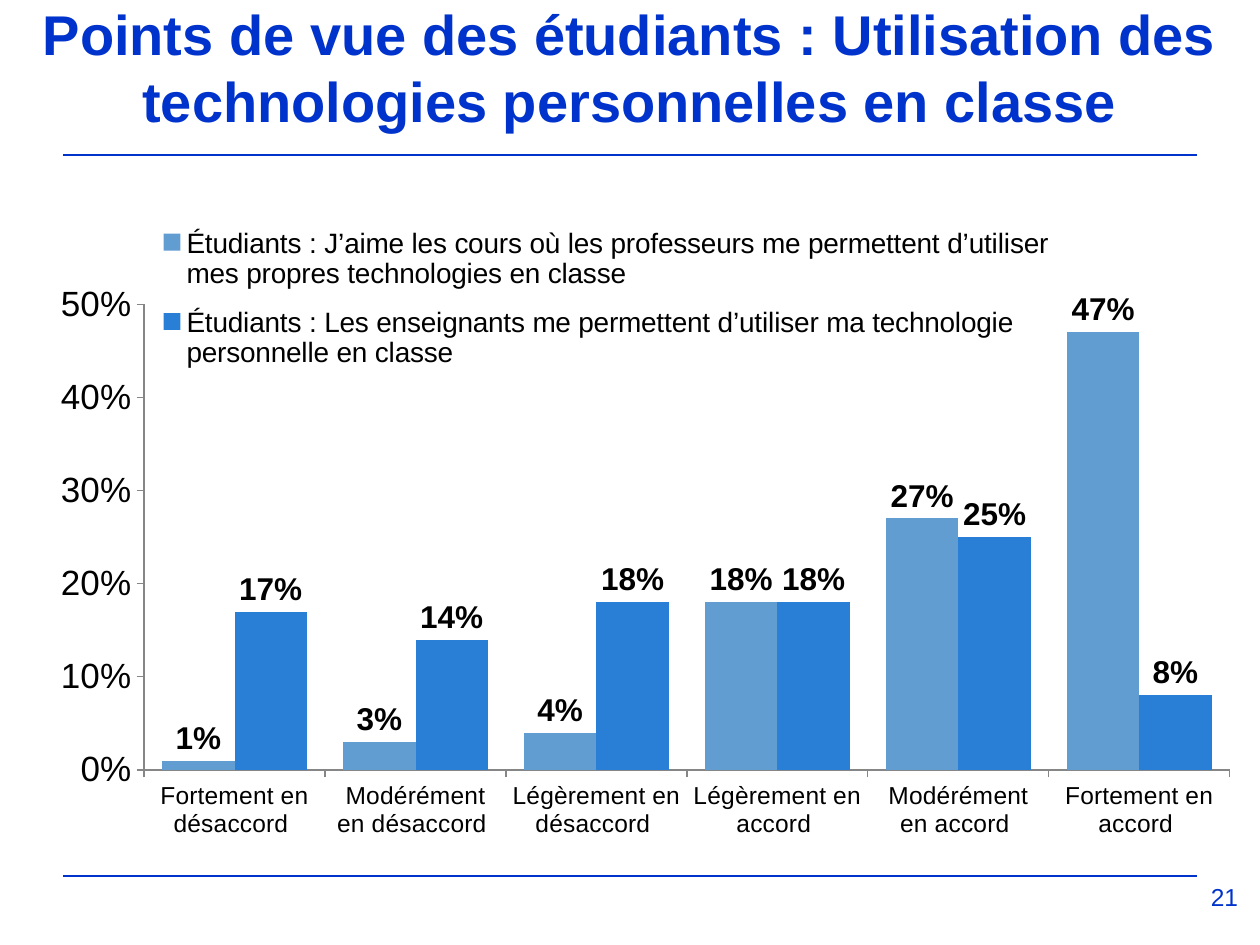
"""Builds the slide on students' views of personal technology in class."""
from dataclasses import dataclass

from lxml import etree
from pptx import Presentation
from pptx import util as u
from pptx.chart.data import CategoryChartData
from pptx.dml.color import RGBColor
from pptx.enum import chart as charts
from pptx.enum import shapes, text
from pptx.oxml.ns import qn

PX = u.Inches(1) / 126
BLUE = RGBColor(0x00, 0x33, 0xCC)
LIGHT_BAR = RGBColor(0x62, 0x9D, 0xD1)
DARK_BAR = RGBColor(0x29, 0x7F, 0xD5)
BLACK = RGBColor(0, 0, 0)
AXIS_GREY = RGBColor(0x86, 0x86, 0x86)
FONT = "Arial"


@dataclass
class Box:
    left: int
    top: int
    width: int
    height: int

    def emu(self) -> list:
        return [px(side) for side in (self.left, self.top, self.width, self.height)]


@dataclass
class Answers:
    question: str
    shares: tuple
    color: RGBColor


CHART_BOX = Box(30, 175, 1201, 684)
TITLE_BOX = Box(0, 45, 1260, 95)
NUMBER_BOX = Box(1189, 876, 71, 53)
RULE_LEFT, RULE_RIGHT = 63, 1197
RULE_TOPS = (155, 876)
CATEGORIES = (
    "Fortement en désaccord ", "Modérément en désaccord ", "Légèrement en désaccord ",
    "Légèrement en accord ", "Modérément en accord ", "Fortement en accord ",
)
ANSWERS = (
    Answers("Étudiants : J’aime les cours où les professeurs me permettent d’utiliser "
            "mes propres technologies en classe",
            (0.01, 0.03, 0.04, 0.18, 0.27, 0.47), LIGHT_BAR),
    Answers("Étudiants : Les enseignants me permettent d’utiliser ma technologie "
            "personnelle en classe",
            (0.17, 0.14, 0.18, 0.18, 0.25, 0.08), DARK_BAR),
)


def px(length: int) -> int:
    return round(length * PX)


def style_font(font, size: int, color: RGBColor, bold: bool = False) -> None:
    font.name, font.size, font.bold = FONT, u.Pt(size), bold
    font.color.rgb = color


def add_rule(slide, top: int) -> None:
    rule = slide.shapes.add_connector(
        shapes.MSO_CONNECTOR.STRAIGHT, px(RULE_LEFT), px(top), px(RULE_RIGHT), px(top))
    rule.line.color.rgb = BLUE
    rule.line.width = u.Pt(1.5)
    etree.SubElement(rule._element.spPr, qn("a:effectLst"))


def fill_frame(shape, box: Box, words: str, size: int, bold: bool = False) -> None:
    shape.left, shape.top, shape.width, shape.height = box.emu()
    frame = shape.text_frame
    frame.text = words
    frame.word_wrap = True
    frame.auto_size = text.MSO_AUTO_SIZE.NONE
    paragraph = frame.paragraphs[0]
    paragraph.alignment = text.PP_ALIGN.CENTER
    style_font(paragraph.font, size, BLUE, bold)


def set_layout(parent, index: int, target: str, *fractions: float) -> None:
    for old in parent.findall(qn("c:layout")):
        parent.remove(old)
    layout = etree.Element(qn("c:layout"))
    manual = etree.SubElement(layout, qn("c:manualLayout"))
    settings = [("layoutTarget", target)] if target else []
    settings += [("xMode", "edge"), ("yMode", "edge")]
    settings += zip("xywh", map(str, fractions))
    for name, value in settings:
        etree.SubElement(manual, qn(f"c:{name}")).set("val", value)
    parent.insert(index, layout)


def style_axis(axis, size: int) -> None:
    axis.has_major_gridlines = False
    axis.major_tick_mark = charts.XL_TICK_MARK.OUTSIDE
    axis.minor_tick_mark = charts.XL_TICK_MARK.NONE
    axis.format.line.color.rgb = AXIS_GREY
    axis.format.line.width = u.Pt(0.75)
    style_font(axis.tick_labels.font, size, BLACK)


def add_answer_chart(slide) -> None:
    data = CategoryChartData(number_format="0%")
    data.categories = CATEGORIES
    for answers in ANSWERS:
        data.add_series(answers.question, answers.shares)
    chart = slide.shapes.add_chart(
        charts.XL_CHART_TYPE.COLUMN_CLUSTERED, *CHART_BOX.emu(), data).chart
    chart.has_title = False
    style_font(chart.font, 10, BLACK)

    plot = chart.plots[0]
    plot.gap_width, plot.overlap, plot.vary_by_categories = 50, 0, False
    for series, answers in zip(plot.series, ANSWERS):
        series.format.fill.solid()
        series.format.fill.fore_color.rgb = answers.color
        labels = series.data_labels
        labels.show_value = True
        labels.number_format, labels.number_format_is_linked = "0%", False
        labels.position = charts.XL_LABEL_POSITION.OUTSIDE_END
        style_font(labels.font, 18, BLACK, bold=True)

    style_axis(chart.category_axis, 14)
    value_axis = chart.value_axis
    style_axis(value_axis, 20)
    value_axis.minimum_scale, value_axis.maximum_scale, value_axis.major_unit = 0, 0.5, 0.1
    value_axis.tick_labels.number_format = "0%"
    value_axis.tick_labels.number_format_is_linked = False

    chart.has_legend = True
    legend = chart.legend
    legend.position = charts.XL_LEGEND_POSITION.TOP
    legend.include_in_layout = False
    style_font(legend.font, 16, BLACK)
    set_layout(legend._element, 1, "", 0.09, 0.05, 0.78, 0.26)
    set_layout(chart._chartSpace.chart.plotArea, 0, "inner", 0.095, 0.189, 0.904, 0.681)


def main() -> None:
    presentation = Presentation()
    presentation.slide_width, presentation.slide_height = px(1260), px(945)
    slide = presentation.slides.add_slide(presentation.slide_layouts[5])
    for top in RULE_TOPS:
        add_rule(slide, top)
    title = slide.shapes.title
    fill_frame(title, TITLE_BOX, "Points de vue des étudiants : Utilisation des "
               "technologies personnelles en classe", 32, bold=True)
    title.text_frame.vertical_anchor = text.MSO_ANCHOR.BOTTOM
    number = slide.shapes.add_textbox(*NUMBER_BOX.emu())
    fill_frame(number, NUMBER_BOX, "21", 14)
    add_answer_chart(slide)
    presentation.save("out.pptx")


if __name__ == "__main__":
    main()
